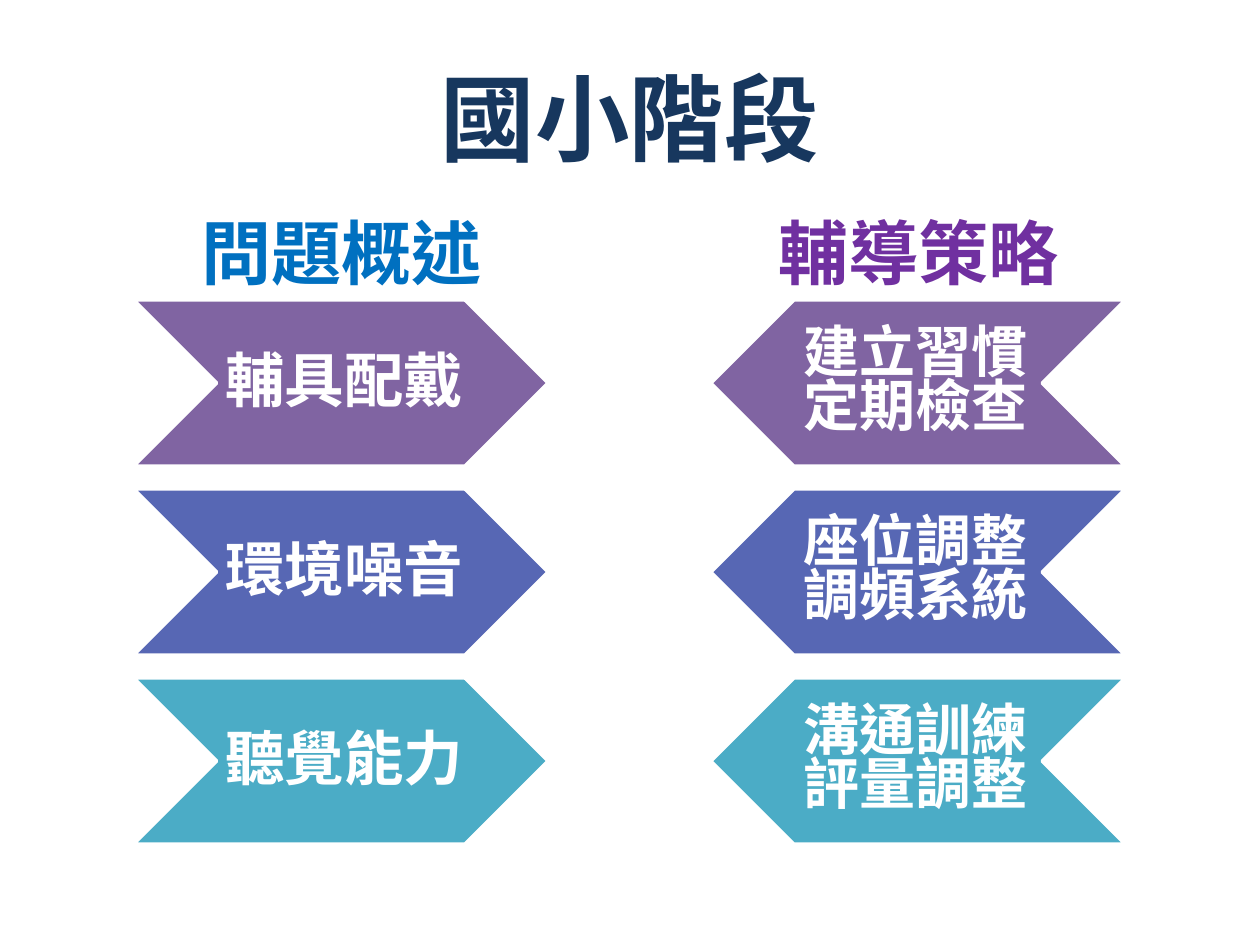
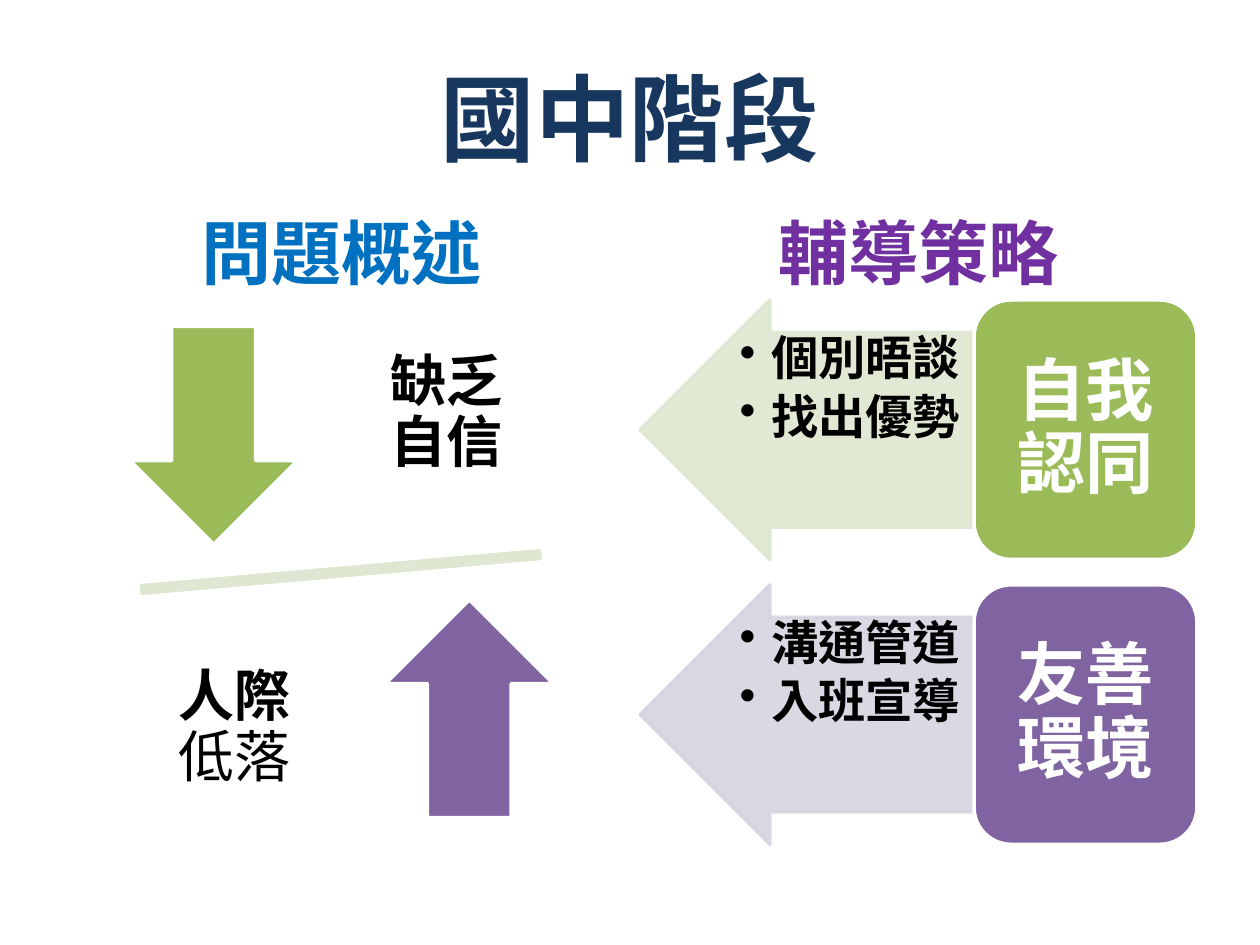
import dataclasses

import lxml.etree
import pptx
import pptx.dml.color
import pptx.enum.shapes
import pptx.enum.text
import pptx.oxml.ns
import pptx.util

Pt = pptx.util.Pt
RGB = pptx.dml.color.RGBColor.from_string
PRESET = pptx.enum.shapes.MSO_SHAPE
ANCHOR = pptx.enum.text.MSO_ANCHOR
ALIGN = pptx.enum.text.PP_ALIGN
qn = pptx.oxml.ns.qn


@dataclasses.dataclass(frozen=True)
class Theme:
    font: str = "Arial"
    navy: str = "17375E"
    blue: str = "0070C0"
    violet: str = "7030A0"
    purple: str = "8064A2"
    indigo: str = "5767B4"
    teal: str = "4BACC6"
    green: str = "9BBB59"
    pale_green: str = "DEE7D1"
    pale_purple: str = "D8D3E0"
    white: str = "FFFFFF"
    black: str = "000000"
    title_size: int = 54
    heading_size: int = 40
    badge_size: int = 39
    problem_size: int = 34
    strategy_size: int = 32
    bullet_size: int = 27
    outline: int = 2


theme = Theme()


def add_preset(slide, preset, box, fill, line=theme.white, rotation=0, opacity=100):
    shape = slide.shapes.add_shape(preset, *map(Pt, box))
    shape.shadow.inherit = False
    shape.rotation = rotation
    shape.fill.solid()
    shape.fill.fore_color.rgb = RGB(fill)
    shape.line.color.rgb = RGB(line)
    shape.line.width = Pt(theme.outline)
    if opacity < 100:
        for color in shape.element.spPr.iter(qn("a:srgbClr")):
            lxml.etree.SubElement(color, qn("a:alpha"), val=str(opacity * 1000))
    return shape


def add_text(slide, box, paragraphs, size, color, anchor=ANCHOR.MIDDLE,
             insets=(7.2, 3.6, 7.2, 3.6), spacing=1.0, bulleted=False):
    """Each paragraph is a list of runs: the first is bold, later ones regular."""
    frame = slide.shapes.add_textbox(*map(Pt, box)).text_frame
    frame.word_wrap = True
    frame.vertical_anchor = anchor
    (frame.margin_left, frame.margin_top,
     frame.margin_right, frame.margin_bottom) = map(Pt, insets)
    for index, runs in enumerate(paragraphs):
        paragraph = frame.paragraphs[0] if index == 0 else frame.add_paragraph()
        paragraph.line_spacing = spacing
        paragraph.alignment = ALIGN.LEFT if bulleted else ALIGN.CENTER
        if bulleted:
            paragraph.level = 1
            paragraph.space_after = Pt(4)
            properties = paragraph._p.get_or_add_pPr()
            properties.set("marL", str(Pt(18)))
            properties.set("indent", str(Pt(-18)))
            lxml.etree.SubElement(properties, qn("a:buChar"), char="•")
        for position, words in enumerate(runs):
            run = paragraph.add_run()
            run.text = words
            run.font.name = theme.font
            run.font.size = Pt(size)
            run.font.bold = position == 0
            run.font.color.rgb = RGB(color)
            run._r.get_or_add_rPr().set("lang", "zh-TW")


deck = pptx.Presentation()
deck.slide_width, deck.slide_height = Pt(720), Pt(540)

# Title and column headings shared by both stages
content_top = 171.4
columns = [("問題概述", 36, theme.blue), ("輔導策略", 365.8, theme.violet)]
stages = []
for title, heading_tops in [("國小階段", (105.8, 111.6)), ("國中階段", (111.6, 105.8))]:
    stage = deck.slides.add_slide(deck.slide_layouts[6])
    add_text(stage, (36, 21.6, 648, 90), [[title]], theme.title_size, theme.navy)
    for (heading, left, color), top in zip(columns, heading_tops):
        add_text(stage, (left, top, 318.2, content_top - top), [[heading]],
                 theme.heading_size, color, ANCHOR.BOTTOM)
    stages.append(stage)
elementary, junior_high = stages

# Elementary school: each problem faces its strategy
problem_left, strategy_left = 76.3, 406.1
chevron_width, chevron_height, chevron_pitch = 236.9, 95, 108
label_offset, label_width = 47.4, 142.6
pairs = [
    ("輔具配戴", ["建立習慣定期檢查"], theme.purple),
    ("環境噪音", ["座位調整", "調頻系統"], theme.indigo),
    ("聽覺能力", ["溝通訓練", "評量調整"], theme.teal),
]
for row, (problem, strategies, color) in enumerate(pairs):
    top = content_top + row * chevron_pitch
    sides = [
        (problem_left, 0, [problem], theme.problem_size, 0.9, (3.6, 1.4, 0, 1.4)),
        (strategy_left, 180, strategies, theme.strategy_size, 0.8, (0, 1.4, 2.9, 1.4)),
    ]
    for left, rotation, lines, size, spacing, insets in sides:
        add_preset(elementary, PRESET.CHEVRON, (left, top, chevron_width, chevron_height),
                   color, rotation=rotation)
        add_text(elementary, (left + label_offset, top, label_width, chevron_height),
                 [[line] for line in lines], size, theme.white,
                 insets=insets, spacing=spacing)

# Junior high school: problems on either side of a tilted divider
add_preset(junior_high, PRESET.MATH_MINUS, (36.7, 308.9, 316.1, 36),
           theme.pale_green, rotation=355)
problems = [
    (PRESET.DOWN_ARROW, (74.2, 186.5), theme.green, (204.5, 171.4), ["缺乏自信"]),
    (PRESET.UP_ARROW, (220.3, 342.7), theme.purple, (83.5, 351.4), ["人際", "低落"]),
]
for arrow, arrow_corner, color, label_corner, runs in problems:
    add_preset(junior_high, arrow, (*arrow_corner, 95.8, 124.6), color)
    add_text(junior_high, (*label_corner, 101.5, 130.3), [runs], theme.strategy_size,
             theme.black, insets=(18,) * 4, spacing=0.9)

# Junior high school: goals with the steps that lead from them
arrow_left, arrow_width = 365.8, 190.8
goal_left, goal_width = arrow_left + arrow_width, 127.4
goal_height, goal_pitch, goal_padding = 148.3, 162.8, 6.3
steps_left, steps_offset = 421.2, 18.7
goals = [
    ("自我認同", ["個別晤談", "找出優勢"], theme.green, theme.pale_green),
    ("友善環境", ["溝通管道", "入班宣導"], theme.purple, theme.pale_purple),
]
for row, (goal, steps, color, tint) in enumerate(goals):
    top = content_top + row * goal_pitch
    arrow = add_preset(junior_high, PRESET.RIGHT_ARROW,
                       (arrow_left, top, arrow_width, goal_height),
                       tint, tint, rotation=180, opacity=90)
    arrow.adjustments[0] = 0.75
    arrow.adjustments[1] = 0.5
    add_text(junior_high,
             (steps_left, top + steps_offset, goal_left - steps_left,
              goal_height - 2 * steps_offset),
             [[step] for step in steps], theme.bullet_size, theme.black, ANCHOR.TOP,
             insets=(1.4,) * 4, spacing=0.9, bulleted=True)
    add_preset(junior_high, PRESET.ROUNDED_RECTANGLE,
               (goal_left, top, goal_width, goal_height), color)
    add_text(junior_high,
             (goal_left + goal_padding, top + goal_padding,
              goal_width - 2 * goal_padding, goal_height - 2 * goal_padding),
             [[goal]], theme.badge_size, theme.white,
             insets=(11.5, 5.8, 11.5, 5.8), spacing=0.9)

deck.save("out.pptx")
